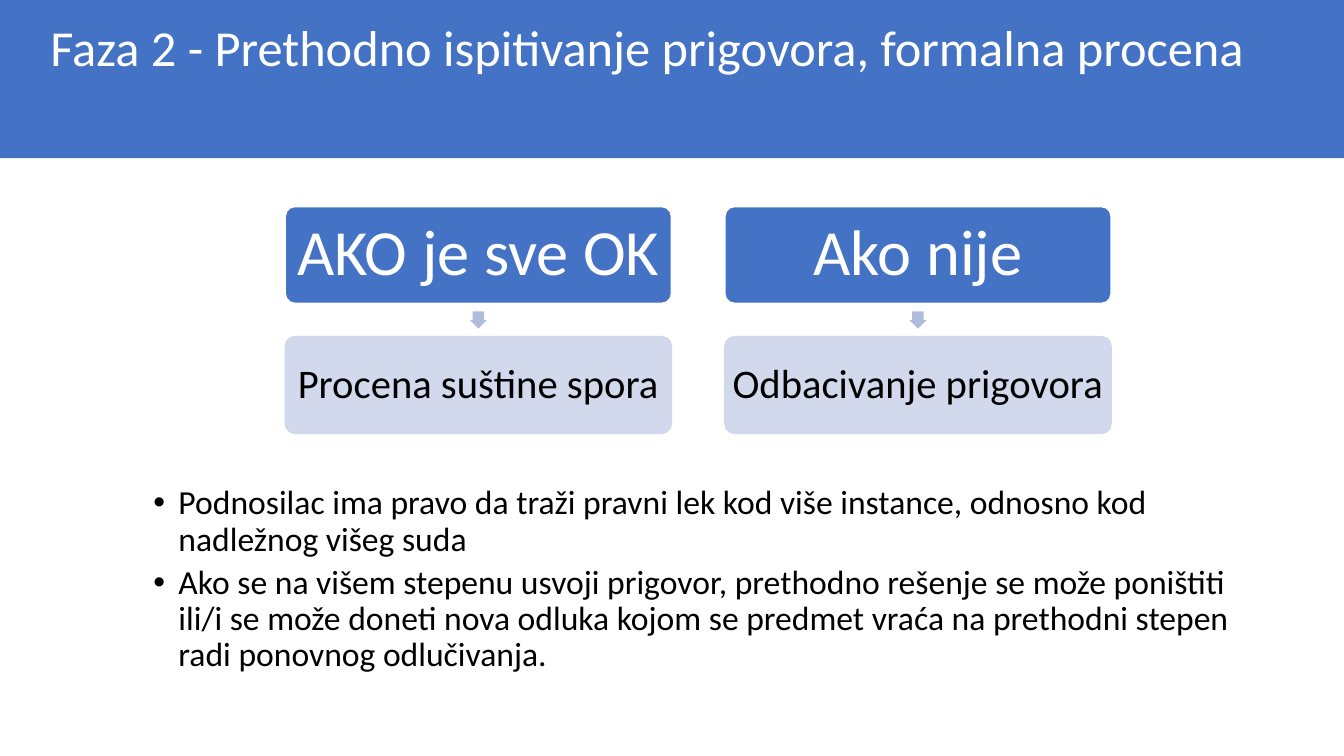
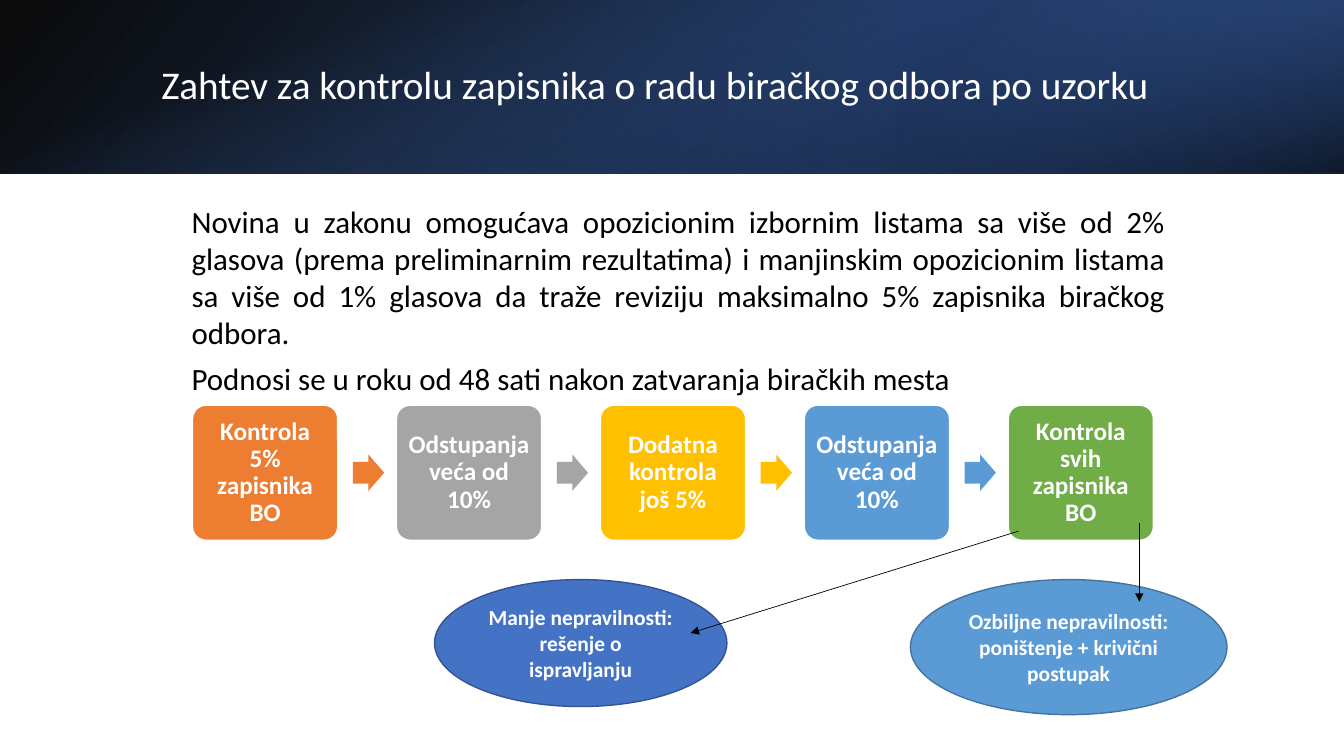
from dataclasses import dataclass

from lxml.etree import SubElement
from pptx import Presentation
from pptx.dml.color import RGBColor
from pptx.enum.shapes import MSO_CONNECTOR, MSO_SHAPE
from pptx.enum.text import MSO_ANCHOR, MSO_AUTO_SIZE, PP_ALIGN
from pptx.oxml.ns import qn
from pptx.util import Inches, Pt

FONT = "Calibri"
BLACK = RGBColor(0x00, 0x00, 0x00)
WHITE = RGBColor(0xFF, 0xFF, 0xFF)
BLUE = RGBColor(0x44, 0x72, 0xC4)
BLUE_EDGE = RGBColor(0x32, 0x54, 0x91)
MID_BLUE = RGBColor(0x2F, 0x55, 0x97)
NAVY = RGBColor(0x20, 0x38, 0x64)
SKY = RGBColor(0x5B, 0x9B, 0xD5)
SKY_EDGE = RGBColor(0x43, 0x73, 0x9E)
PALE_BLUE = RGBColor(0xCF, 0xD5, 0xEA)
ARROW_BLUE = RGBColor(0xB0, 0xBC, 0xDE)
ORANGE = RGBColor(0xED, 0x7D, 0x31)
GRAY = RGBColor(0xA5, 0xA5, 0xA5)
GOLD = RGBColor(0xFF, 0xC0, 0x00)
GREEN = RGBColor(0x70, 0xAD, 0x47)

SLIDE_WIDTH = 13.33
SLIDE_HEIGHT = 7.5


@dataclass
class Box:
    left: float
    top: float
    width: float
    height: float

    def lengths(self):
        return [Inches(side) for side in (self.left, self.top, self.width, self.height)]


def place(shape, box):
    shape.left, shape.top, shape.width, shape.height = box.lengths()


def style_paragraph(para, size, color, bold=False, align=PP_ALIGN.LEFT, spacing=0.9):
    para.alignment = align
    para.line_spacing = spacing
    para.space_before = Pt(0)
    for span in para.runs:
        span.font.name = FONT
        span.font.size = Pt(size)
        span.font.bold = bold
        span.font.color.rgb = color


def set_opacity(shape, percents):
    colors = shape.element.spPr.iter(qn("a:srgbClr"))
    for color, percent in zip(list(colors), percents):
        SubElement(color, qn("a:alpha")).set("val", str(percent * 1000))


def add_plain_shape(page, kind, box, fill=None, line=None, adjustments=()):
    shape = page.shapes.add_shape(kind, *box.lengths())
    shape.shadow.inherit = False
    for index, value in enumerate(adjustments):
        shape.adjustments[index] = value
    if fill is not None:
        shape.fill.solid()
        shape.fill.fore_color.rgb = fill
    if line is None:
        shape.line.fill.background()
    else:
        shape.line.color.rgb = line
        shape.line.width = Pt(1)
    return shape


def write_label(shape, text, size, color, bold=False, inset=None, spacing=0.9):
    frame = shape.text_frame
    frame.text = text
    frame.word_wrap = True
    frame.vertical_anchor = MSO_ANCHOR.MIDDLE
    if inset is not None:
        frame.margin_left = frame.margin_right = Inches(inset)
        frame.margin_top = frame.margin_bottom = Inches(inset)
    style_paragraph(frame.paragraphs[0], size, color, bold, PP_ALIGN.CENTER, spacing)


def add_card(page, box, text, fill, line, size, color, inset, bold=False):
    card = add_plain_shape(page, MSO_SHAPE.ROUNDED_RECTANGLE, box, fill, line, [0.1])
    write_label(card, text, size, color, bold, inset)
    return card


def write_title(page, box, text, size):
    title = page.shapes.title
    place(title, box)
    title.text_frame.text = text
    title.text_frame.auto_size = MSO_AUTO_SIZE.NONE
    title.text_frame.vertical_anchor = MSO_ANCHOR.MIDDLE
    style_paragraph(title.text_frame.paragraphs[0], size, WHITE)
    page.shapes.element.append(title.element)
    return title


def write_body(page, box, texts, size, align, spacing):
    body = page.placeholders[1]
    place(body, box)
    frame = body.text_frame
    frame.auto_size = MSO_AUTO_SIZE.NONE
    frame.text = "\n".join(texts)
    for para in frame.paragraphs:
        style_paragraph(para, size, BLACK, align=align, spacing=spacing)
    return frame.paragraphs


def set_bullet(para, margin=0, indent=0, character=None):
    properties = para._p.get_or_add_pPr()
    properties.set("marL", str(Inches(margin)))
    properties.set("indent", str(Inches(indent)))
    if character is None:
        SubElement(properties, qn("a:buNone"))
    else:
        SubElement(properties, qn("a:buFont")).set("typeface", "Arial")
        SubElement(properties, qn("a:buChar")).set("char", character)


def add_outcome_column(page, box, condition, result):
    card_height = 0.96
    arrow_size = 0.17
    upper = Box(box.left, box.top, box.width, card_height)
    lower = Box(box.left, box.top + box.height - card_height, box.width, card_height)
    arrow = Box(
        box.left + (box.width - arrow_size) / 2,
        box.top + (box.height - arrow_size) / 2,
        arrow_size,
        arrow_size,
    )
    add_card(page, upper, condition, BLUE, WHITE, 46, WHITE, 0.06)
    add_plain_shape(page, MSO_SHAPE.DOWN_ARROW, arrow, ARROW_BLUE, adjustments=[0.67, 0.5])
    card = add_card(page, lower, result, PALE_BLUE, PALE_BLUE, 29, BLACK, 0.04)
    set_opacity(card, [90, 90])


def add_gradient(page, box, stops, angle, rotation=0, flipped=False):
    band = add_plain_shape(page, MSO_SHAPE.RECTANGLE, box)
    band.rotation = rotation
    if flipped:
        band.element.spPr.get_or_add_xfrm().set("flipH", "1")
    band.fill.gradient()
    band.fill.gradient_angle = 360 - angle
    for stop, (position, color, opacity) in zip(band.fill.gradient_stops, stops):
        stop.position = position
        stop.color.rgb = color
    set_opacity(band, [opacity for position, color, opacity in stops])


def add_gradient_band(page, box):
    third = box.width / 3
    right_part = Box(box.left + 2 * third, box.top, third, box.height)
    upright = Box(
        box.left + (box.width - box.height) / 2,
        box.top + (box.height - box.width) / 2,
        box.height,
        box.width,
    )
    add_gradient(page, box, [(0, BLACK, 96), (1, MID_BLUE, 100)], 140, flipped=True)
    add_gradient(page, right_part, [(0.19, NAVY, 68), (1, BLUE, 79)], 320, 180, True)
    add_gradient(page, upright, [(0.23, BLUE, 0), (0.99, BLACK, 74)], 340, 90)


def add_process(page, box, steps):
    card_width = 1.44
    arrow_width, arrow_height = 0.31, 0.36
    pitch = (box.width - card_width) / (len(steps) - 1)
    for index, (text, color) in enumerate(steps):
        left = box.left + index * pitch
        card = Box(left, box.top, card_width, box.height)
        add_card(page, card, text, color, WHITE, 18, WHITE, 0.07, True)
        if index < len(steps) - 1:
            arrow = Box(
                left + card_width + 0.15,
                box.top + (box.height - arrow_height) / 2,
                arrow_width,
                arrow_height,
            )
            add_plain_shape(page, MSO_SHAPE.RIGHT_ARROW, arrow, color, adjustments=[0.6, 0.5])


def add_verdict(page, box, text, fill, line):
    oval = add_plain_shape(page, MSO_SHAPE.OVAL, box, fill, line)
    write_label(oval, text, 15.3, WHITE, True, spacing=1.0)


def add_arrow(page, start, end):
    ends = [Inches(value) for value in (*start, *end)]
    arrow = page.shapes.add_connector(MSO_CONNECTOR.STRAIGHT, *ends)
    arrow.line.color.rgb = BLACK
    arrow.line.width = Pt(0.5)
    SubElement(arrow.line._get_or_add_ln(), qn("a:tailEnd")).set("type", "triangle")
    SubElement(arrow.element.spPr, qn("a:effectLst"))


def build_preliminary_review(deck):
    page = deck.slides.add_slide(deck.slide_layouts[1])
    title = write_title(
        page,
        Box(0, 0, SLIDE_WIDTH, 1.57),
        "Faza 2 - Prethodno ispitivanje prigovora, formalna procena",
        36,
    )
    title.fill.solid()
    title.fill.fore_color.rgb = BLUE
    title.text_frame.vertical_anchor = MSO_ANCHOR.TOP
    title.text_frame.margin_left = Inches(0.5)
    title.text_frame.margin_top = Inches(0.23)
    outcomes = [
        ("AKO je sve OK", "Procena suštine spora"),
        ("Ako nije", "Odbacivanje prigovora"),
    ]
    for index, (condition, result) in enumerate(outcomes):
        column = Box(2.83 + index * 4.36, 2.05, 3.83, 2.25)
        add_outcome_column(page, column, condition, result)
    texts = [
        "Podnosilac ima pravo da traži pravni lek kod više instance, odnosno kod nadležnog višeg suda",
        "Ako se na višem stepenu usvoji prigovor, prethodno rešenje se može poništiti ili/i se može "
        "doneti nova odluka kojom se predmet vraća na prethodni stepen radi ponovnog odlučivanja.",
    ]
    body = Box(0.92, 4.77, 11.5, 2.5)
    for para in write_body(page, body, texts, 24, PP_ALIGN.LEFT, 0.9):
        para.level = 1
        para.space_before = Pt(5)
        set_bullet(para, 0.75, -0.25, "•")


def build_sample_control(deck):
    page = deck.slides.add_slide(deck.slide_layouts[1])
    add_gradient_band(page, Box(0, 0, SLIDE_WIDTH, 1.72))
    write_title(
        page,
        Box(1.5, 0.38, 10.98, 0.96),
        "Zahtev za kontrolu zapisnika o radu biračkog odbora po uzorku",
        28,
    )
    texts = [
        "Novina u zakonu omogućava opozicionim izbornim listama sa više od 2% glasova (prema "
        "preliminarnim rezultatima) i manjinskim opozicionim listama sa više od 1% glasova da "
        "traže reviziju maksimalno 5% zapisnika biračkog odbora.",
        "Podnosi se u roku od 48 sati nakon zatvaranja biračkih mesta",
    ]
    body = Box(1.8, 1.96, 9.85, 2.05)
    for para in write_body(page, body, texts, 22.1, PP_ALIGN.JUSTIFY, 1.0):
        para.space_after = Pt(6)
        set_bullet(para)
    steps = [
        ("Kontrola 5% zapisnika BO", ORANGE),
        ("Odstupanja veća od 10%", GRAY),
        ("Dodatna kontrola još 5%", GOLD),
        ("Odstupanja veća od 10%", SKY),
        ("Kontrola svih zapisnika BO", GREEN),
    ]
    add_process(page, Box(1.91, 4.02, 9.53, 1.34), steps)
    minor = "Manje nepravilnosti: rešenje o ispravljanju"
    serious = "Ozbiljne nepravilnosti: poništenje + krivični postupak"
    add_verdict(page, Box(4.31, 5.75, 2.9, 1.26), minor, BLUE, BLUE_EDGE)
    add_verdict(page, Box(9.03, 5.75, 3.14, 1.34), serious, SKY, SKY_EDGE)
    add_arrow(page, (11.3, 5.19), (11.3, 5.97))
    add_arrow(page, (10.1, 5.27), (6.85, 6.28))


def main():
    deck = Presentation()
    deck.slide_width = Inches(SLIDE_WIDTH)
    deck.slide_height = Inches(SLIDE_HEIGHT)
    build_preliminary_review(deck)
    build_sample_control(deck)
    deck.save("out.pptx")


if __name__ == "__main__":
    main()
